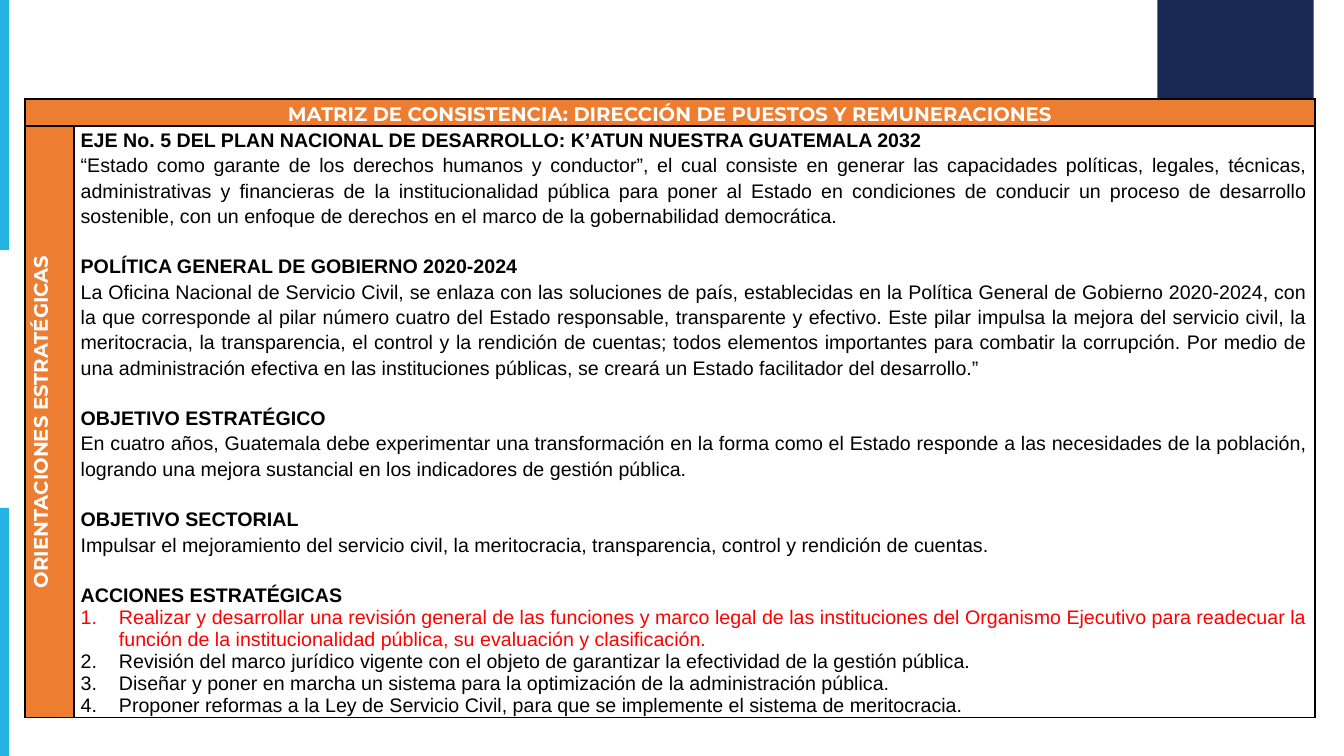
from pptx import Presentation
from pptx.dml.color import RGBColor
from pptx.enum.shapes import MSO_SHAPE
from pptx.enum.text import PP_ALIGN
from pptx.oxml.ns import qn
from pptx.util import Inches, Pt
from lxml import etree

RECTANGLE = MSO_SHAPE.RECTANGLE
CENTER, JUSTIFY = PP_ALIGN.CENTER, PP_ALIGN.JUSTIFY

NAVY = RGBColor(0x19, 0x28, 0x54)
SKY = RGBColor(0x23, 0xB2, 0xE3)
ORANGE = RGBColor(0xED, 0x7D, 0x31)
WHITE = RGBColor(0xFF, 0xFF, 0xFF)
BLACK = RGBColor(0x00, 0x00, 0x00)
RED = RGBColor(0xFF, 0x00, 0x00)

HEADING = "MATRIZ DE CONSISTENCIA: DIRECCIÓN DE PUESTOS Y REMUNERACIONES"
SIDE_LABEL = "ORIENTACIONES ESTRATÉGICAS"
SECTIONS = [
    ("EJE No. 5 DEL PLAN NACIONAL DE DESARROLLO: K’ATUN NUESTRA GUATEMALA 2032",
     "“Estado como garante de los derechos humanos y conductor”, el cual consiste en "
     "generar las capacidades políticas, legales, técnicas, administrativas y financieras "
     "de la institucionalidad pública para poner al Estado en condiciones de conducir un "
     "proceso de desarrollo sostenible, con un enfoque de derechos en el marco de la "
     "gobernabilidad democrática."),
    ("POLÍTICA GENERAL DE GOBIERNO 2020-2024",
     "La Oficina Nacional de Servicio Civil, se enlaza con las soluciones de país, "
     "establecidas en la Política General de Gobierno 2020-2024, con la que corresponde al "
     "pilar número cuatro del Estado responsable, transparente y efectivo. Este pilar "
     "impulsa la mejora del servicio civil, la meritocracia, la transparencia, el control y "
     "la rendición de cuentas; todos elementos importantes para combatir la corrupción. Por "
     "medio de una administración efectiva en las instituciones públicas, se creará un "
     "Estado facilitador del desarrollo.”"),
    ("OBJETIVO ESTRATÉGICO",
     "En cuatro años, Guatemala debe experimentar una transformación en la forma como el "
     "Estado responde a las necesidades de la población, logrando una mejora sustancial en "
     "los indicadores de gestión pública."),
    ("OBJETIVO SECTORIAL",
     "Impulsar el mejoramiento del servicio civil, la meritocracia, transparencia, control "
     "y rendición de cuentas."),
]
ACTIONS_TITLE = "ACCIONES ESTRATÉGICAS"
ACTIONS = [
    ("Realizar y desarrollar una revisión general de las funciones y marco legal de las "
     "instituciones del Organismo Ejecutivo para readecuar la función de la "
     "institucionalidad pública, su evaluación y clasificación.", RED),
    ("Revisión del marco jurídico vigente con el objeto de garantizar la efectividad de la "
     "gestión pública.", BLACK),
    ("Diseñar y poner en marcha un sistema para la optimización de la administración "
     "pública.", BLACK),
    ("Proponer reformas a la Ley de Servicio Civil, para que se implemente el sistema de "
     "meritocracia.", BLACK),
]


class MatrixPage:
    """Style and current slide; lengths are percentages of the slide's size."""

    label_font, body_font = "Montserrat", "Arial"
    size, leading, section_gap = Pt(14), 1.15, Pt(18)
    hanging, cell_margin, border = Inches(0.38), Inches(0.07), Pt(1.5)

    def __init__(self, deck):
        self.width, self.height = deck.slide_width, deck.slide_height
        self.page = deck.slides.add_slide(deck.slide_layouts[6])

    def across(self, share):
        return round(self.width * share / 100)

    def down(self, share):
        return round(self.height * share / 100)

    def block(self, left, top, width, height, color):
        box = self.page.shapes.add_shape(
            RECTANGLE, self.across(left), self.down(top),
            self.across(width), self.down(height))
        box.shadow.inherit = False
        box.fill.solid()
        box.fill.fore_color.rgb = color
        box.line.fill.background()

    def table(self, left, top, columns, rows):
        frame = self.page.shapes.add_table(
            len(rows), len(columns), self.across(left), self.down(top),
            self.across(sum(columns)), self.down(sum(rows)))
        table = frame.table
        table.first_row = table.horz_banding = False
        for column, share in zip(table.columns, columns):
            column.width = self.across(share)
        for row, share in zip(table.rows, rows):
            row.height = self.down(share)
        for cell in table.iter_cells():
            self.frame_cell(cell)
        return table

    def frame_cell(self, cell):
        cell.margin_left = cell.margin_right = self.cell_margin
        cell.margin_top = cell.margin_bottom = 0
        cell.fill.background()
        properties = cell._tc.get_or_add_tcPr()
        for position, side in enumerate(("a:lnL", "a:lnR", "a:lnT", "a:lnB")):
            line = etree.Element(qn(side), w=str(self.border))
            fill = etree.SubElement(line, qn("a:solidFill"))
            etree.SubElement(fill, qn("a:srgbClr"), val=str(BLACK))
            properties.insert(position, line)

    def paragraph(self, cell, text, color=BLACK, bold=False, align=JUSTIFY, font=None):
        para = cell.text_frame.paragraphs[0]
        if para.text:
            para = cell.text_frame.add_paragraph()
        para.text = text
        para.alignment = align
        span = para.runs[0].font
        span.name, span.size, span.bold = font or self.body_font, self.size, bold
        span.color.rgb = color
        return para

    def label(self, cell, text):
        cell.fill.solid()
        cell.fill.fore_color.rgb = ORANGE
        para = self.paragraph(cell, text, WHITE, True, CENTER, self.label_font)
        para.line_spacing = self.leading

    def section_title(self, cell, text, first=False):
        para = self.paragraph(cell, text, bold=True)
        para.line_spacing = self.leading
        para.space_before = 0 if first else self.section_gap

    def section_text(self, cell, text):
        self.paragraph(cell, text).line_spacing = self.leading

    def numbered(self, cell, text, color):
        properties = self.paragraph(cell, text, color)._p.get_or_add_pPr()
        properties.set("marL", str(self.hanging))
        properties.set("indent", str(-self.hanging))
        etree.SubElement(properties, qn("a:buAutoNum"), type="arabicPeriod")


def main():
    deck = Presentation()
    deck.slide_width, deck.slide_height = Inches(13.33), Inches(7.5)
    matrix = MatrixPage(deck)

    # Corner block and the two stripes on the left edge
    matrix.block(86.12, -7.33, 11.63, 22.4, NAVY)
    stripe = 34.13
    for step in (2, 0):
        matrix.block(-0.23, -1.07 + step * stripe, 0.9, stripe, SKY)

    # Table with its heading and rotated side label
    table = matrix.table(1.88, 13.07, columns=(3.6, 92.35), rows=(3.47, 78.2))
    heading, side, body = table.cell(0, 0), table.cell(1, 0), table.cell(1, 1)
    heading.merge(table.cell(0, 1))
    matrix.label(heading, HEADING)
    matrix.label(side, SIDE_LABEL)
    side._tc.get_or_add_tcPr().set("vert", "vert270")

    # Strategic guidelines
    for index, (title, text) in enumerate(SECTIONS):
        matrix.section_title(body, title, first=index == 0)
        matrix.section_text(body, text)

    # Numbered actions
    matrix.section_title(body, ACTIONS_TITLE)
    for text, color in ACTIONS:
        matrix.numbered(body, text, color)

    deck.save("out.pptx")


if __name__ == "__main__":
    main()
